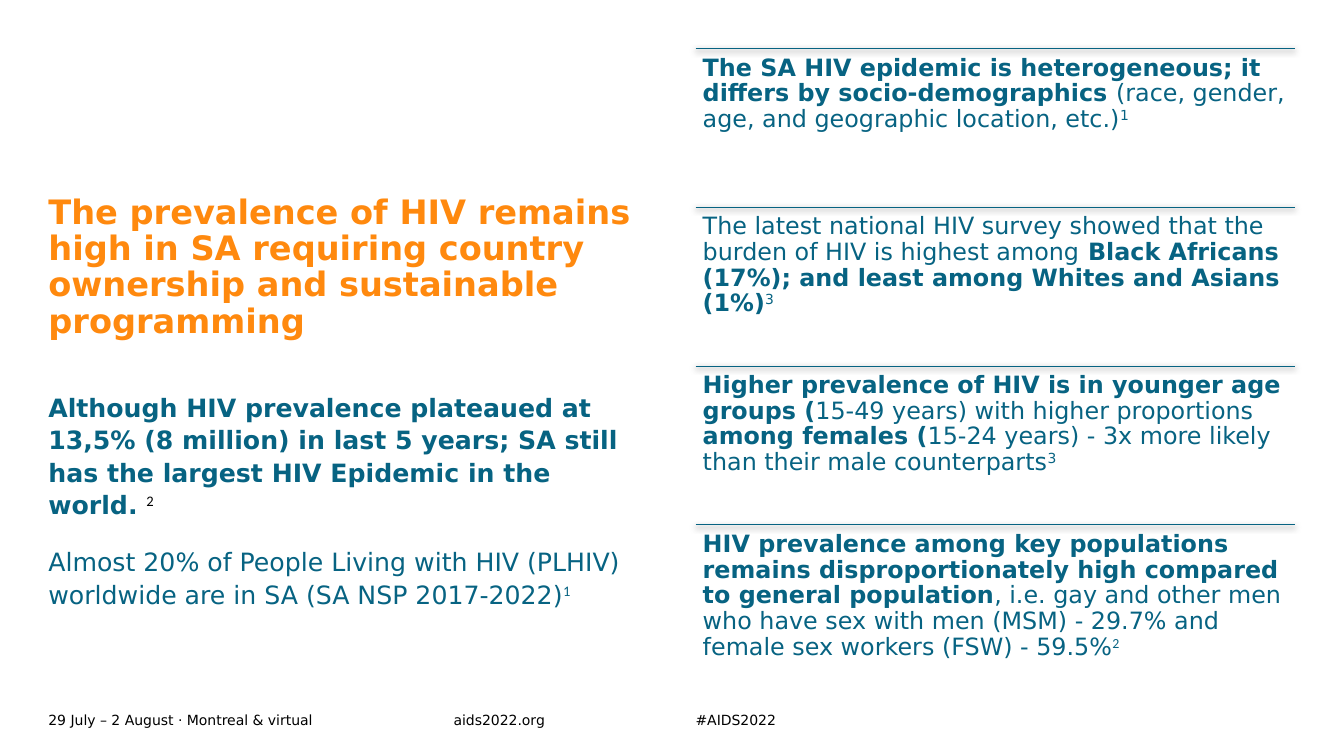
from dataclasses import dataclass

from lxml import etree
from pptx import Presentation
from pptx import util as u
from pptx.dml.color import RGBColor
from pptx.enum import shapes, text
from pptx.oxml import parse_xml
from pptx.oxml.ns import nsdecls

COLORS = {"teal": "076382", "orange": "FF890E", "black": "000000"}
FONT = "DejaVu Sans"
NOTE_FONT = "Calibri"
LEFT, RIGHT, COLUMN_WIDTH = 1.22, 17.53, 15.11
FINDINGS_TOP, FINDING_HEIGHT = 1.22, 4.0
FOOTER_TOP, FOOTER_HEIGHT = 17.83, 0.61


@dataclass(frozen=True)
class Piece:
    """A stretch of text with one format."""
    words: str
    bold: bool = False
    raised: bool = False
    font: str = FONT
    color: str = "teal"


@dataclass(frozen=True)
class Box:
    left: float
    top: float
    width: float
    height: float
    inset: float = 0


FINDINGS = [
    [Piece("The SA HIV epidemic is heterogeneous; it differs by socio-demographics ", bold=True),
     Piece("(race, gender, age, and geographic location, etc.)"),
     Piece("1", raised=True)],
    [Piece("The latest national HIV survey showed that the burden of HIV is highest among"),
     Piece(" Black Africans (17%); and least among Whites and Asians (1%)", bold=True),
     Piece("3", raised=True)],
    [Piece("Higher prevalence of HIV is in younger age groups (", bold=True),
     Piece("15-49 years) with higher proportions "),
     Piece("among females (", bold=True),
     Piece("15-24 years) - 3x more likely than their male counterparts"),
     Piece("3", raised=True)],
    [Piece("HIV prevalence among key populations remains disproportionately high "
           "compared to general population", bold=True),
     Piece(", i.e. gay and other men who have sex with men (MSM) - 29.7% "
           "and female sex workers (FSW) - 59.5%"),
     Piece("2", raised=True, font=NOTE_FONT)],
]

SUMMARY = [
    [Piece("Although HIV prevalence plateaued at 13,5% (8 million) in last 5 years; "
           "SA still has the largest HIV Epidemic in the world. ", bold=True),
     Piece("2", raised=True, font=NOTE_FONT, color="black")],
    [Piece("Almost 20% of People Living with HIV (PLHIV) worldwide are in SA (SA NSP 2017-2022)"),
     Piece("1", raised=True, font=NOTE_FONT)],
]

FOOTERS = [
    ("29 July – 2 August · Montreal & virtual", Box(LEFT, FOOTER_TOP, 10.21, FOOTER_HEIGHT)),
    ("aids2022.org", Box(11.43, FOOTER_TOP, 4.9, FOOTER_HEIGHT)),
    ("#AIDS2022", Box(RIGHT, FOOTER_TOP, 4.9, FOOTER_HEIGHT)),
]


def fill_paragraph(paragraph, pieces: list[Piece], size: float, spacing: float) -> None:
    paragraph.alignment = text.PP_ALIGN.LEFT
    paragraph.line_spacing = spacing
    for piece in pieces:
        run = paragraph.add_run()
        run.text = piece.words
        run.font.name = piece.font
        run.font.size = u.Pt(size)
        run.font.bold = piece.bold
        run.font.color.rgb = RGBColor.from_string(COLORS[piece.color])
        if piece.raised:
            run.font._element.set("baseline", "30000")


def place(shape, box: Box, anchor=text.MSO_ANCHOR.TOP) -> None:
    shape.left, shape.top = u.Cm(box.left), u.Cm(box.top)
    shape.width, shape.height = u.Cm(box.width), u.Cm(box.height)
    frame = shape.text_frame
    frame.word_wrap = True
    frame.auto_size = text.MSO_AUTO_SIZE.NONE
    frame.vertical_anchor = anchor
    frame.margin_left = frame.margin_right = u.Cm(box.inset)
    frame.margin_top = frame.margin_bottom = u.Cm(box.inset)


def add_text(slide, box: Box, paragraphs: list[list[Piece]], size: float,
             spacing: float = 1.0, before: float = 0, after: float = 0,
             anchor=text.MSO_ANCHOR.TOP) -> None:
    shape = slide.shapes.add_textbox(0, 0, 0, 0)
    place(shape, box, anchor)
    frame = shape.text_frame
    for index, pieces in enumerate(paragraphs):
        paragraph = frame.add_paragraph() if index else frame.paragraphs[0]
        paragraph.space_before = u.Pt(before if index else 0)
        paragraph.space_after = u.Pt(after)
        fill_paragraph(paragraph, pieces, size, spacing)


def add_rule(slide, top: float) -> None:
    """Draw a thin line with a soft shadow below it."""
    rule = slide.shapes.add_connector(
        shapes.MSO_CONNECTOR.STRAIGHT,
        u.Cm(RIGHT), u.Cm(top), u.Cm(RIGHT + COLUMN_WIDTH), u.Cm(top))
    rule.line.color.rgb = RGBColor.from_string(COLORS["teal"])
    rule.line.width = u.Pt(0.5)
    effects = parse_xml(f"<a:effectLst {nsdecls('a')}/>")
    shadow = etree.SubElement(
        effects, "{%s}outerShdw" % effects.nsmap["a"], blurRad=str(u.Pt(4.5)),
        dist=str(u.Pt(1.5)), dir="5400000", algn="ctr", rotWithShape="0")
    color = etree.SubElement(shadow, "{%s}srgbClr" % effects.nsmap["a"], val=COLORS["black"])
    etree.SubElement(color, "{%s}alpha" % effects.nsmap["a"], val="63000")
    rule._element.spPr.append(effects)


def main() -> None:
    presentation = Presentation()
    presentation.slide_width, presentation.slide_height = u.Cm(33.87), u.Cm(19.05)
    slide = presentation.slides.add_slide(presentation.slide_layouts[5])

    # Footer
    for words, box in FOOTERS:
        add_text(slide, box, [[Piece(words, color="black")]], 10,
                 anchor=text.MSO_ANCHOR.MIDDLE)

    # Title and summary on the left
    title = slide.shapes.title
    place(title, Box(LEFT, 4.62, COLUMN_WIDTH, 3.96), text.MSO_ANCHOR.BOTTOM)
    headline = Piece("The prevalence of HIV remains high in SA requiring country "
                     "ownership and sustainable programming", bold=True, color="orange")
    fill_paragraph(title.text_frame.paragraphs[0], [headline], 24, 0.9)
    add_text(slide, Box(LEFT, 9.83, COLUMN_WIDTH, 5.82), SUMMARY, 18,
             spacing=1.07, before=10, after=8)

    # Findings on the right, each under a rule
    for index, pieces in enumerate(FINDINGS):
        top = FINDINGS_TOP + index * FINDING_HEIGHT
        add_rule(slide, top)
        add_text(slide, Box(RIGHT, top, COLUMN_WIDTH, FINDING_HEIGHT, inset=0.18),
                 [pieces], 17, spacing=0.9)

    presentation.save("out.pptx")


if __name__ == "__main__":
    main()
